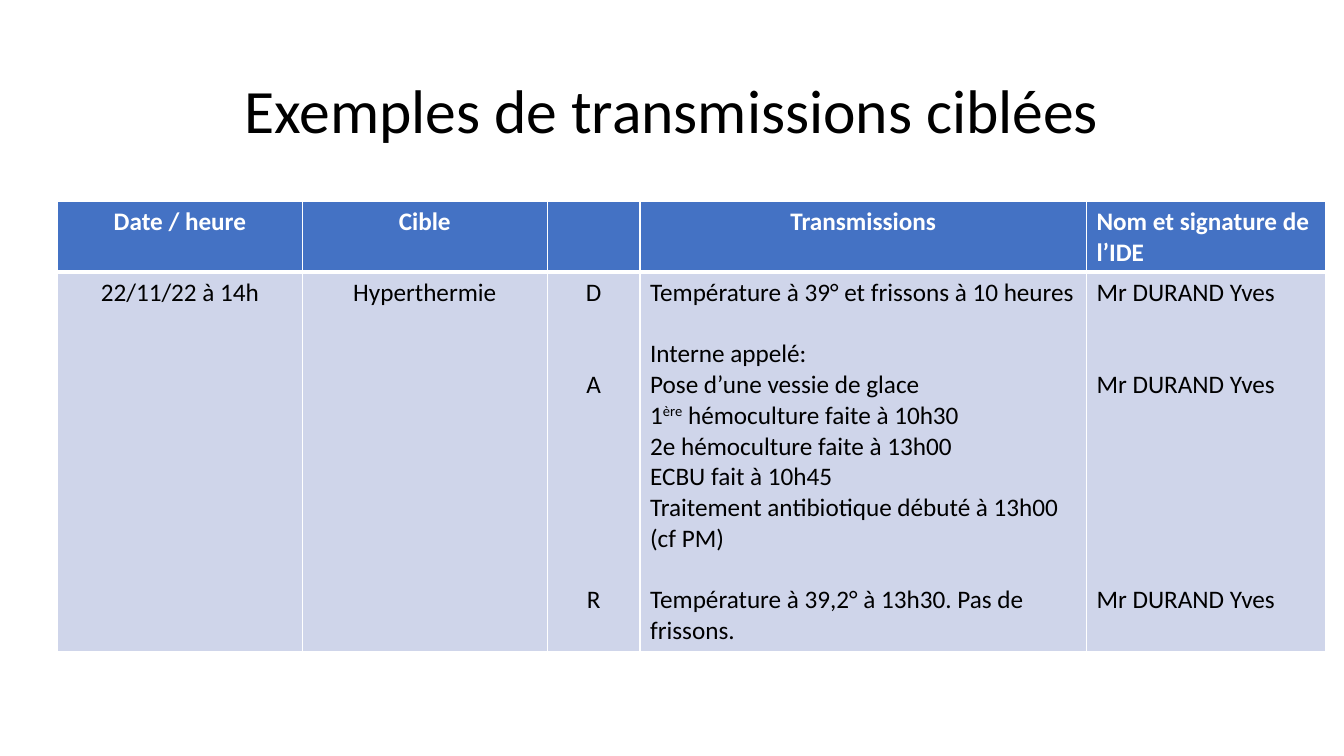
from dataclasses import dataclass
from lxml.etree import SubElement
from pptx import Presentation
from pptx.dml.color import RGBColor
from pptx.enum.text import MSO_ANCHOR, PP_ALIGN
from pptx.oxml.ns import qn
from pptx.util import Cm, Pt


@dataclass
class Theme:
    font: str = "Calibri"
    title: int = 44
    body: int = 18
    line: float = 21.97  # height of one body line in points
    black: str = "000000"
    white: str = "FFFFFF"
    blue: str = "4472C4"
    pale: str = "CFD5EA"


theme = Theme()


def style(run, size, color, bold=False):
    run.font.name = theme.font
    run.font.size = Pt(size)
    run.font.bold = bold
    run.font.color.rgb = RGBColor.from_string(color)


def border(cell, side, width):
    edge = SubElement(cell._tc.get_or_add_tcPr(), qn(f"a:ln{side}"), w=str(Pt(width)))
    fill = SubElement(edge, qn("a:solidFill"))
    SubElement(fill, qn("a:srgbClr"), val=theme.white)


deck = Presentation()
deck.slide_width, deck.slide_height = Cm(33.87), Cm(19.05)
slide = deck.slides.add_slide(deck.slide_layouts[6])

# Title
box = slide.shapes.add_textbox(Cm(2.33), Cm(1.01), Cm(29.21), Cm(3.68))
frame = box.text_frame
frame.word_wrap = True
frame.vertical_anchor = MSO_ANCHOR.MIDDLE
frame.text = "Exemples de transmissions ciblées"
head = frame.paragraphs[0]
head.alignment = PP_ALIGN.CENTER
head.line_spacing = 0.9
style(head.runs[0], theme.title, theme.black)

# Table content: each paragraph is its text and the lines left free above it;
# text between carets is raised
nurse = "Mr DURAND Yves"
header = ["Date / heure", "Cible", "", "Transmissions", "Nom et signature de l’IDE"]
entry = [
    [("22/11/22 à 14h", 0)],
    [("Hyperthermie", 0)],
    [("D", 0), ("A", 2), ("R", 6)],
    [
        ("Température à 39° et frissons à 10 heures", 0),
        ("Interne appelé:", 1),
        ("Pose d’une vessie de glace", 0),
        ("1^ère^ hémoculture faite à 10h30", 0),
        ("2e hémoculture faite à 13h00", 0),
        ("ECBU fait à 10h45", 0),
        ("Traitement antibiotique débuté à 13h00 (cf PM)", 0),
        ("Température à 39,2° à 13h30. Pas de frissons.", 1),
    ],
    [(nurse, 0), (nurse, 2), (nurse, 6)],
]
rows = [[[(text, 0)] for text in header], entry]
widths = [6.17, 6.17, 2.34, 11.25, 6.02]
heights = [1.78, 9.55]
centred = [{0, 1, 2, 3}, {0, 1, 2}]

# Table grid
table = slide.shapes.add_table(
    len(rows), len(widths), Cm(1.45), Cm(5.08), Cm(sum(widths)), Cm(sum(heights))
).table
for col, width in zip(table.columns, widths):
    col.width = Cm(width)
for row, height in zip(table.rows, heights):
    row.height = Cm(height)

# Cells
looks = [(theme.blue, theme.white, True), (theme.pale, theme.black, False)]
edges = [{"L": 1, "R": 1, "T": 1, "B": 3}, {"L": 1, "R": 1, "T": 3, "B": 1}]
for y, row in enumerate(rows):
    back, ink, bold = looks[y]
    for x, paras in enumerate(row):
        cell = table.cell(y, x)
        for side, width in edges[y].items():
            border(cell, side, width)
        cell.fill.solid()
        cell.fill.fore_color.rgb = RGBColor.from_string(back)
        frame = cell.text_frame
        for i, (text, gap) in enumerate(paras):
            para = frame.add_paragraph() if i else frame.paragraphs[0]
            para.alignment = PP_ALIGN.CENTER if x in centred[y] else PP_ALIGN.LEFT
            if gap:
                para.space_before = Pt(gap * theme.line)
            if not text:
                para.font.size = Pt(theme.body)
                continue
            for j, part in enumerate(text.split("^")):
                run = para.add_run()
                run.text = part
                style(run, theme.body, ink, bold)
                if j % 2:
                    run._r.get_or_add_rPr().set("baseline", "30000")

deck.save("out.pptx")
